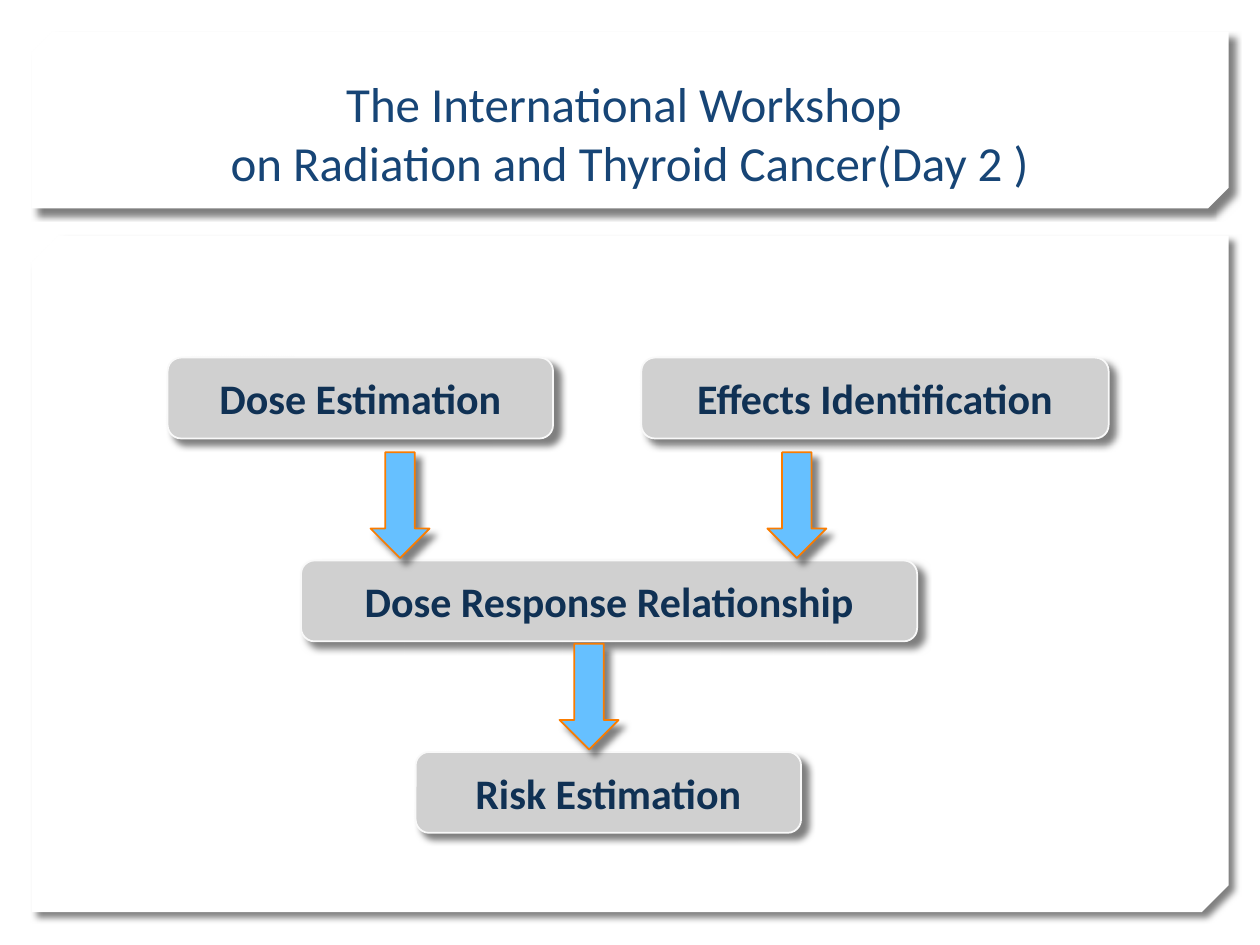
from lxml import etree
from pptx import Presentation
from pptx.dml.color import RGBColor
from pptx.enum import shapes, text
from pptx.oxml.ns import qn
from pptx.util import Cm, Pt

WHITE = RGBColor(0xFF, 0xFF, 0xFF)
NAVY = RGBColor(0x17, 0x45, 0x76)
INK = RGBColor(0x10, 0x31, 0x54)
GREY = RGBColor(0xD0, 0xD0, 0xD0)
PALE = RGBColor(0xF9, 0xF9, 0xF9)
SKY = RGBColor(0x66, 0xC0, 0xFF)
ORANGE = RGBColor(0xFA, 0x7C, 0x00)
KIND = shapes.MSO_SHAPE

# Content, lengths in cm
TITLE = "The International Workshop \von Radiation and Thyroid Cancer(Day 2 )"
PANELS = [(4.75, 13.64, 0.04), (0.64, 3.56, 0.117)]  # top, height, snip
BOXES = [  # text, left, top, width
    ("Dose Estimation", 3.38, 7.21, 7.77),
    ("Effects Identification", 12.93, 7.21, 9.42),
    ("Dose Response Relationship", 6.07, 11.3, 12.42),
    ("Risk Estimation", 8.38, 15.16, 7.77),
]
ARROWS = [(7.47, 9.12), (15.47, 9.12), (11.28, 12.98)]  # left, top
EDGE, PANEL_W = 0.64, 24.13
BOX_H = 1.63
ARROW_W, ARROW_H = 1.19, 2.13


def shade(shape):
    """Soft black shadow towards the lower right."""
    shape.shadow.inherit = False
    effects = shape._element.spPr.find(qn("a:effectLst"))
    outer = etree.SubElement(effects, qn("a:outerShdw"), blurRad=str(Pt(4)),
                             dist=str(Pt(5)), dir=str(45 * 60000),
                             algn="tl", rotWithShape="0")
    black = etree.SubElement(outer, qn("a:srgbClr"), val="000000")
    etree.SubElement(black, qn("a:alpha"), val="50000")


def draw(kind, left, top, width, height, fill, line=None):
    shape = slide.shapes.add_shape(kind, Cm(left), Cm(top), Cm(width), Cm(height))
    shape.fill.solid()
    shape.fill.fore_color.rgb = fill
    if line is None:
        shape.line.fill.background()
    else:
        shape.line.color.rgb = line
        shape.line.width = Pt(1)
    shade(shape)
    return shape


def write(shape, words, anchor, color, **form):
    frame = shape.text_frame
    frame.text = words
    frame.word_wrap = True
    frame.auto_size = text.MSO_AUTO_SIZE.NONE
    frame.vertical_anchor = anchor
    para = frame.paragraphs[0]
    para.alignment = text.PP_ALIGN.CENTER
    for run in para.runs:
        run.font.color.rgb = color
        for name, value in form.items():
            setattr(run.font, name, value)


deck = Presentation()
deck.slide_width, deck.slide_height = Cm(25.4), Cm(19.05)
slide = deck.slides.add_slide(deck.slide_layouts[5])

# Panels behind everything, snipped at the lower right
for top, height, snip in PANELS:
    panel = draw(KIND.SNIP_2_DIAG_RECTANGLE, EDGE, top, PANEL_W, height, WHITE)
    panel.adjustments[0], panel.adjustments[1] = snip, 0

# Title, brought in front of the panels
title = slide.shapes.title
slide.shapes._spTree.append(title._element)
place = {"left": 2.16, "top": 0.81, "width": 21.06, "height": 3.18}
for name, value in place.items():
    setattr(title, name, Cm(value))
write(title, TITLE, text.MSO_ANCHOR.BOTTOM, NAVY, name="Calibri", size=Pt(28))

# Steps
for words, left, top, width in BOXES:
    box = draw(KIND.ROUNDED_RECTANGLE, left, top, width, BOX_H, GREY, PALE)
    write(box, words, text.MSO_ANCHOR.MIDDLE, INK,
          name="Calibri", size=Pt(24), bold=True)

# Arrows between the steps
for left, top in ARROWS:
    draw(KIND.DOWN_ARROW, left, top, ARROW_W, ARROW_H, SKY, ORANGE)

deck.save("out.pptx")
